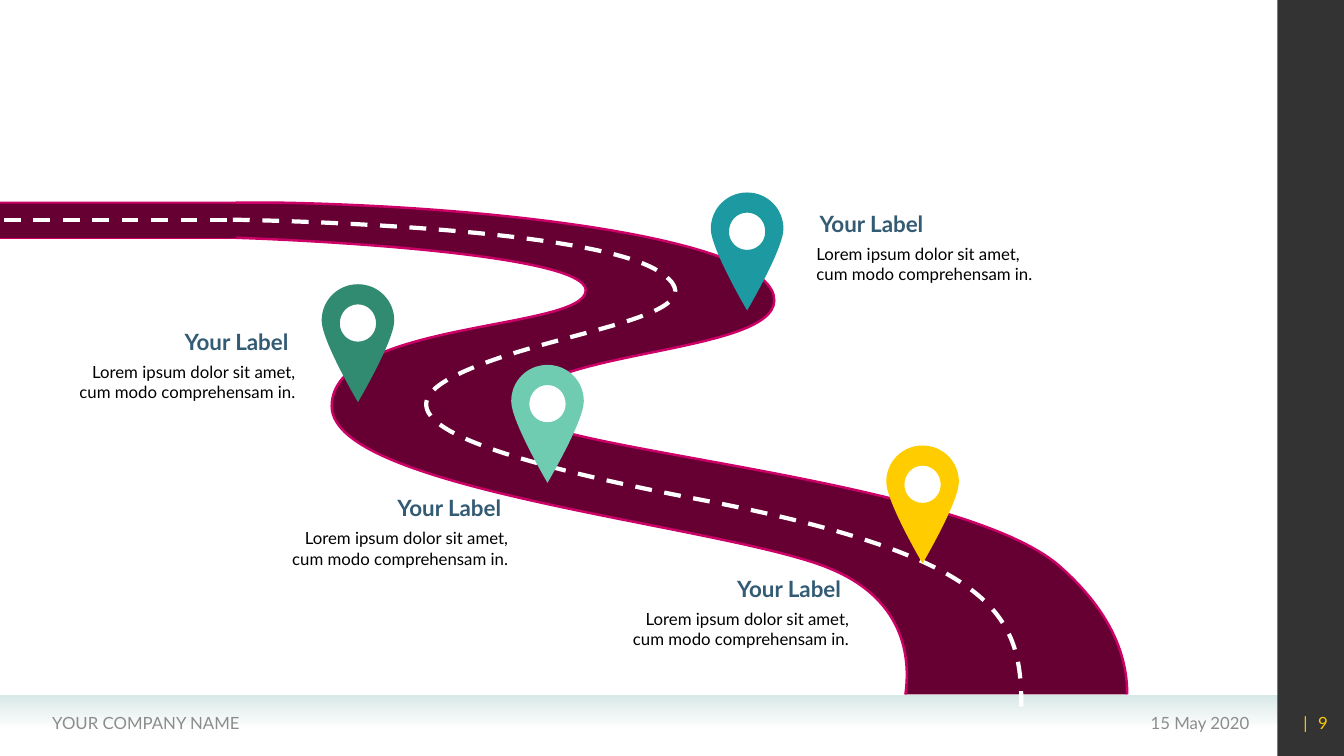
from dataclasses import dataclass

from lxml import etree
from pptx import Presentation
from pptx.dml.color import RGBColor
from pptx.enum.dml import MSO_LINE
from pptx.enum.shapes import MSO_CONNECTOR, MSO_SHAPE
from pptx.enum.text import MSO_ANCHOR, MSO_AUTO_SIZE, PP_ALIGN
from pptx.oxml.ns import qn
from pptx.util import Inches, Pt

DASH = MSO_LINE.DASH
STRAIGHT = MSO_CONNECTOR.STRAIGHT
RECTANGLE = MSO_SHAPE.RECTANGLE
MIDDLE, TOP = MSO_ANCHOR.MIDDLE, MSO_ANCHOR.TOP
GROW, FIXED = MSO_AUTO_SIZE.SHAPE_TO_FIT_TEXT, MSO_AUTO_SIZE.NONE
LEFT, RIGHT = PP_ALIGN.LEFT, PP_ALIGN.RIGHT

WHITE = RGBColor(0xFF, 0xFF, 0xFF)
BLACK = RGBColor(0x00, 0x00, 0x00)
MIST = RGBColor(0xD9, 0xE9, 0xE8)
GREY = RGBColor(0x8C, 0x8C, 0x8C)
SLATE = RGBColor(0x33, 0x5B, 0x74)
ASPHALT = RGBColor(0x66, 0x00, 0x33)
KERB = RGBColor(0xCC, 0x00, 0x66)
TEAL = RGBColor(0x1D, 0x9A, 0xA1)
GREEN = RGBColor(0x31, 0x8B, 0x71)
MINT = RGBColor(0x70, 0xCC, 0xB1)
YELLOW = RGBColor(0xFF, 0xCC, 0x00)

FONT = "Lato"
LABEL = "Your Label"
DETAIL = "Lorem ipsum dolor sit amet, cum modo comprehensam in."

Point = tuple[float, float]
Contour = list[Point]


@dataclass(frozen=True)
class Milestone:
    pin_x: float
    pin_top: float
    color: RGBColor
    label_left: float
    label_top: float
    detail_left: float
    align: PP_ALIGN


@dataclass(frozen=True)
class TextStyle:
    size: float
    color: RGBColor
    bold: bool = False
    align: PP_ALIGN = LEFT
    anchor: MSO_ANCHOR = MIDDLE
    wrap: bool = True
    auto_size: MSO_AUTO_SIZE = FIXED
    space_before: float = 0


MILESTONES = [
    Milestone(7.41, 1.91, TEAL, 8.03, 2.03, 8.0, LEFT),
    Milestone(3.55, 2.82, GREEN, 1.71, 3.2, 0.5, RIGHT),
    Milestone(9.15, 4.42, YELLOW, 7.19, 5.65, 5.99, RIGHT),
    Milestone(5.43, 3.62, MINT, 3.82, 4.85, 2.61, RIGHT),
]

UPPER_EDGE = [
    (2.34, 2.01), (2.34, 2.01), (2.75, 2.01), (2.75, 2.01),
    (5, 2.05), (7.68, 2.38), (7.68, 2.98),
    (7.68, 3.53), (5.16, 3.47), (5.16, 4.07),
    (5.16, 4.45), (9.43, 4.72), (10.49, 5.6),
    (11.09, 6.12), (11.18, 6.59), (11.18, 6.89),
]
LOWER_EDGE = [
    (2.34, 2.36), (2.74, 2.37), (5.81, 2.5), (5.81, 2.88),
    (5.81, 3.28), (3.29, 3.18), (3.29, 4.03),
    (3.29, 4.87), (7.2, 5.21), (8.23, 5.64),
    (9.03, 5.97), (9.02, 6.61), (8.98, 6.89),
]
CENTRE_LINE = [
    (2.31, 2.18), (2.31, 2.18), (5.8, 2.23), (6.53, 2.69),
    (7.26, 3.15), (5.42, 3.28), (4.53, 3.72),
    (3.81, 4.07), (4.28, 4.45), (6.96, 4.96),
    (9.91, 5.53), (10.13, 6.12), (10.13, 7.01),
]
PIN_BODY = [
    (0, 0), (-0.2, 0), (-0.36, 0.16), (-0.36, 0.36),
    (-0.36, 0.56), (0, 1.17), (0, 1.17),
    (0, 1.17), (0.36, 0.56), (0.36, 0.36),
    (0.36, 0.16), (0.2, 0), (0, 0),
]
PIN_HOLE = [
    (0, 0.57), (-0.1, 0.57), (-0.18, 0.49), (-0.18, 0.39),
    (-0.18, 0.28), (-0.1, 0.2), (0, 0.2),
    (0.1, 0.2), (0.18, 0.28), (0.18, 0.39),
    (0.18, 0.49), (0.1, 0.57), (0, 0.57),
]


def add_outline(page, contours: list[Contour], closed: bool):
    scaled = [[(Inches(x), Inches(y)) for x, y in contour] for contour in contours]
    builder = page.shapes.build_freeform(*scaled[0][0], scale=1.0)
    for index, contour in enumerate(scaled):
        if index:
            builder.move_to(*contour[0])
        builder.add_line_segments(contour[3::3], close=closed)
    shape = builder.convert_to_shape()
    shape.shadow.inherit = False
    handles = [contour[i:i + 2] for contour in scaled for i in range(1, len(contour), 3)]
    for segment, pair in zip(list(shape.element.iter(qn("a:lnTo"))), handles):
        segment.tag = qn("a:cubicBezTo")
        for order, (x, y) in enumerate(pair):
            handle = etree.Element(qn("a:pt"), x=str(x - shape.left), y=str(y - shape.top))
            segment.insert(order, handle)
    return shape


def add_filled(page, contours: list[Contour], color: RGBColor) -> None:
    shape = add_outline(page, contours, True)
    shape.fill.solid()
    shape.fill.fore_color.rgb = color
    shape.line.fill.background()


def add_stroke(page, contours: list[Contour], color: RGBColor, width: float):
    shape = add_outline(page, contours, False)
    shape.fill.background()
    shape.line.color.rgb = color
    shape.line.width = Pt(width)
    return shape


def add_block(page, left: float, top: float, width: float, height: float, color: RGBColor):
    block = page.shapes.add_shape(RECTANGLE, Inches(left), Inches(top), Inches(width), Inches(height))
    block.shadow.inherit = False
    block.fill.solid()
    block.fill.fore_color.rgb = color
    block.line.fill.background()
    return block


def set_last_alpha(shape, percent: int) -> None:
    color = list(shape.element.spPr.iter(qn("a:srgbClr")))[-1]
    etree.SubElement(color, qn("a:alpha")).set("val", str(percent * 1000))


def add_text(page, left: float, top: float, width: float, height: float,
             words: list[str], style: TextStyle):
    box = page.shapes.add_textbox(Inches(left), Inches(top), Inches(width), Inches(height))
    frame = box.text_frame
    frame.word_wrap = style.wrap
    frame.auto_size = style.auto_size
    frame.vertical_anchor = style.anchor
    para = frame.paragraphs[0]
    para.alignment = style.align
    para.space_before = Pt(style.space_before)
    for word in words:
        span = para.add_run()
        span.text = word
        span.font.name = FONT
        span.font.size = Pt(style.size)
        span.font.bold = style.bold
        span.font.color.rgb = style.color
    return box


def add_frame(page) -> None:
    band = add_block(page, 0, 6.9, 12.67, 0.31, MIST)
    band.fill.gradient()
    band.fill.gradient_angle = 270
    for stop, position in zip(band.fill.gradient_stops, (0, 1)):
        stop.color.rgb = MIST
        stop.position = position
    set_last_alpha(band, 0)
    set_last_alpha(add_block(page, 12.67, 0, 0.67, 7.5, BLACK), 80)
    add_text(page, 9.1, 6.97, 3.39, 0.4, ["15 May 2020"], TextStyle(12, GREY, align=RIGHT))
    add_text(page, 0.42, 6.97, 4.9, 0.4, ["YOUR COMPANY NAME"], TextStyle(12, GREY))
    number = add_text(page, 12.6, 6.97, 0.67, 0.4, ["| ", "9"], TextStyle(12, YELLOW, align=RIGHT))
    next(number.element.iter(qn("a:rPr"))).set("spc", "230")


def add_road(page) -> None:
    add_block(page, 0, 2, 2.35, 0.37, KERB)
    add_block(page, 0, 2.02, 2.34, 0.34, ASPHALT)
    road_end = [UPPER_EDGE[-1], LOWER_EDGE[-1]]
    add_filled(page, [UPPER_EDGE + road_end + LOWER_EDGE[::-1]], ASPHALT)
    add_stroke(page, [UPPER_EDGE, LOWER_EDGE], KERB, 1.75)
    centre = add_stroke(page, [CENTRE_LINE], WHITE, 3)
    centre.line.dash_style = DASH
    lane = page.shapes.add_connector(STRAIGHT, Inches(2.25), Inches(2.18), Inches(0), Inches(2.18))
    lane.line.color.rgb = WHITE
    lane.line.width = Pt(3)
    lane.line.dash_style = DASH
    etree.SubElement(lane.element.spPr, qn("a:effectLst"))


def add_milestone(page, stone: Milestone) -> None:
    contours = [[(stone.pin_x + x, stone.pin_top + y) for x, y in contour]
                for contour in (PIN_HOLE, PIN_BODY)]
    add_filled(page, contours, stone.color)
    add_text(page, stone.label_left, stone.label_top, 1.25, 0.37, [LABEL],
             TextStyle(16, SLATE, True, stone.align, wrap=False, auto_size=GROW))
    add_text(page, stone.detail_left, stone.label_top + 0.34, 2.53, 0.5, [DETAIL],
             TextStyle(12, BLACK, False, stone.align, TOP, True, GROW, 2.4))


def main() -> None:
    deck = Presentation()
    deck.slide_width, deck.slide_height = Inches(13.33), Inches(7.5)
    page = deck.slides.add_slide(deck.slide_layouts[6])
    add_frame(page)
    add_road(page)
    for stone in MILESTONES:
        add_milestone(page, stone)
    deck.save("out.pptx")


if __name__ == "__main__":
    main()
